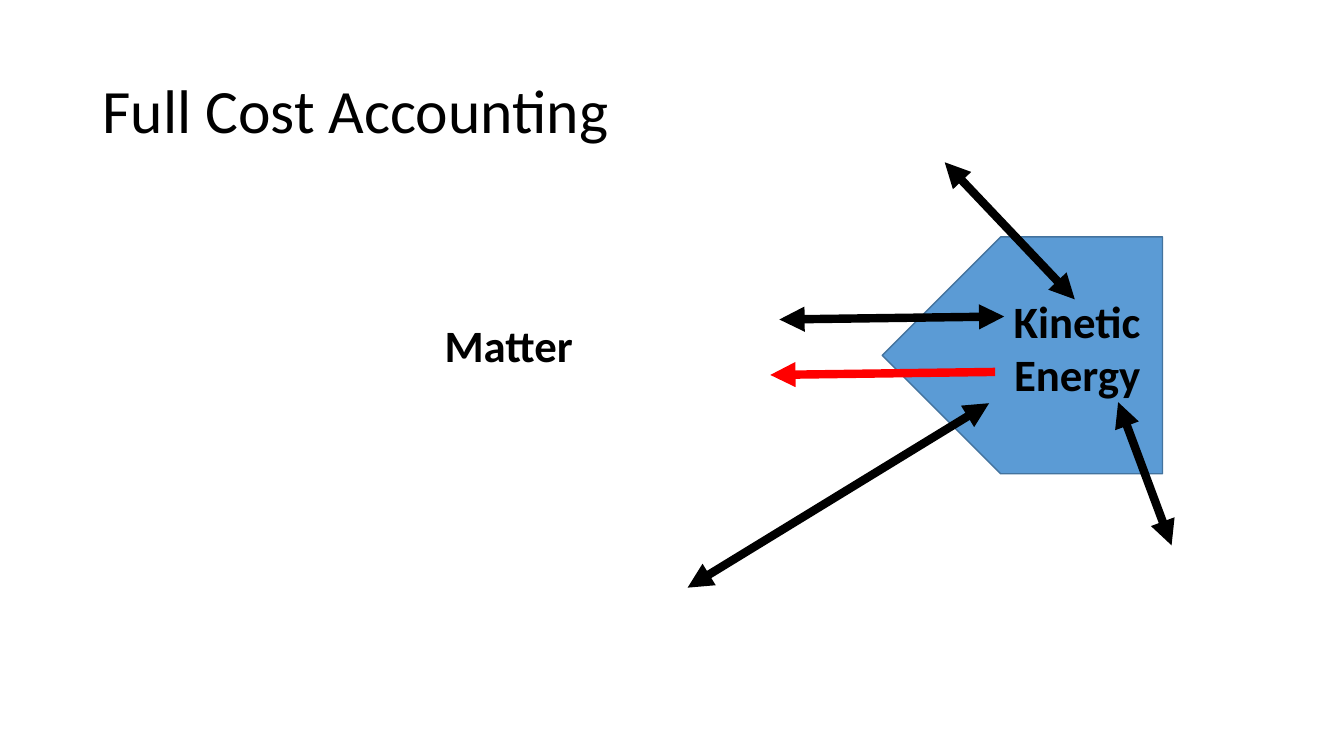
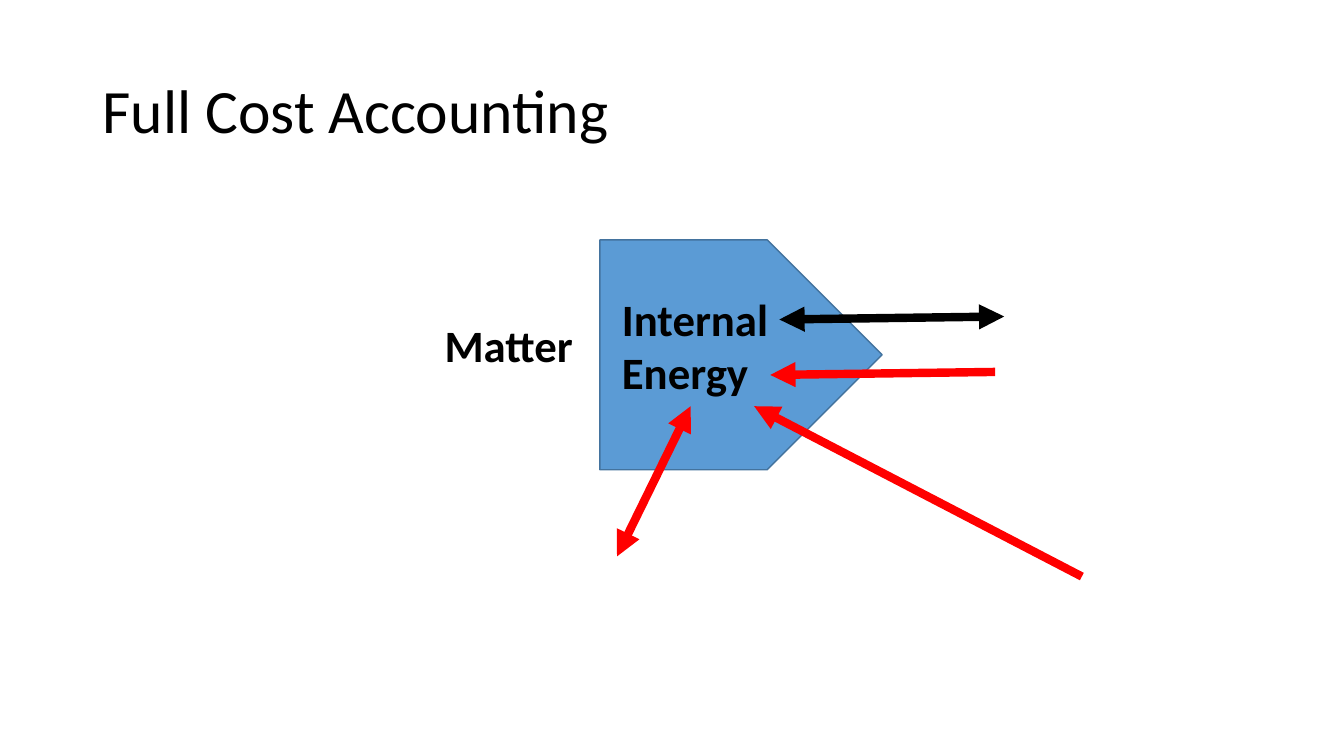
import pptx
import pptx.dml.color
import pptx.enum.shapes
import pptx.enum.text
import pptx.oxml
import pptx.oxml.ns
import pptx.util

PX = 9144  # 100 px to the inch
BLACK, RED, BLUE, EDGE = "000000", "FF0000", "5B9BD5", "43739E"
ALIGN = pptx.enum.text.PP_ALIGN
ANCHOR = pptx.enum.text.MSO_ANCHOR
TITLE = {"size": pptx.util.Pt(44), "name": "Calibri", "bold": False}
LABEL = {"size": pptx.util.Pt(32), "name": "Calibri", "bold": True}

# Each arrow: start, end, colour, ends that carry a head
SHARED_ARROWS = [
    ((996, 314), (773, 317), BLACK, ("head", "tail")),
    ((764, 372), (987, 369), RED, ("head",)),
]
KINETIC_ARROWS = [
    ((937, 161), (1066, 297), BLACK, ("head", "tail")),
    ((1109, 399), (1162, 541), BLACK, ("head", "tail")),
    ((682, 583), (981, 400), BLACK, ("head", "tail")),
]
INTERNAL_ARROWS = [
    ((1073, 572), (748, 403), RED, ("tail",)),
    ((685, 403), (612, 552), RED, ("head", "tail")),
]


def px(*values):
    return [pptx.util.Emu(v * PX) for v in values]


def rgb(color):
    return pptx.dml.color.RGBColor.from_string(color)


def add_text(slide, box, text, style, align=ALIGN.LEFT, anchor=ANCHOR.TOP, spacing=1.0):
    tf = slide.shapes.add_textbox(*px(*box)).text_frame
    tf.word_wrap = True
    tf.vertical_anchor = anchor
    p = tf.paragraphs[0]
    p.alignment = align
    p.line_spacing = spacing
    r = p.add_run()
    r.text = text
    for key, value in style.items():
        setattr(r.font, key, value)
    r.font.color.rgb = rgb(BLACK)


def add_pentagon(slide, box, rotation):
    sp = slide.shapes.add_shape(pptx.enum.shapes.MSO_SHAPE.PENTAGON, *px(*box))
    sp.rotation = rotation
    sp.shadow.inherit = False
    sp.fill.solid()
    sp.fill.fore_color.rgb = rgb(BLUE)
    sp.line.color.rgb = rgb(EDGE)
    sp.line.width = pptx.util.Pt(1)


def add_arrow(slide, start, end, color, heads):
    line = slide.shapes.add_connector(
        pptx.enum.shapes.MSO_CONNECTOR.STRAIGHT, *px(*start, *end))
    line.line.color.rgb = rgb(color)
    line.line.width = pptx.util.Pt(6)
    ln = line.line._get_or_add_ln()
    for side in heads:
        ln.append(pptx.oxml.parse_xml(
            f'<a:{side}End {pptx.oxml.ns.nsdecls("a")} type="triangle"/>'))
    line._element.spPr.append(pptx.oxml.parse_xml(
        f'<a:effectLst {pptx.oxml.ns.nsdecls("a")}/>'))


def add_energy_slide(prs, pentagon, rotation, label_box, label, align, arrows):
    slide = prs.slides.add_slide(prs.slide_layouts[6])
    add_text(slide, (92, 40, 1150, 145), "Full Cost Accounting", TITLE,
             anchor=ANCHOR.MIDDLE, spacing=0.9)
    add_pentagon(slide, pentagon, rotation)
    add_text(slide, label_box, label, LABEL, align)
    add_text(slide, (405, 310, 199, 64), "Matter", LABEL, ALIGN.CENTER)
    for arrow in arrows + SHARED_ARROWS:
        add_arrow(slide, *arrow)


def main():
    prs = pptx.Presentation()
    prs.slide_width, prs.slide_height = px(1333, 750)
    add_energy_slide(prs, (875, 235, 278, 235), 180, (947, 286, 194, 118),
                     "Kinetic Energy", ALIGN.RIGHT, KINETIC_ARROWS)
    add_energy_slide(prs, (595, 238, 280, 228), 0, (607, 284, 183, 118),
                     "Internal Energy", ALIGN.LEFT, INTERNAL_ARROWS)
    prs.save("out.pptx")


if __name__ == "__main__":
    main()
